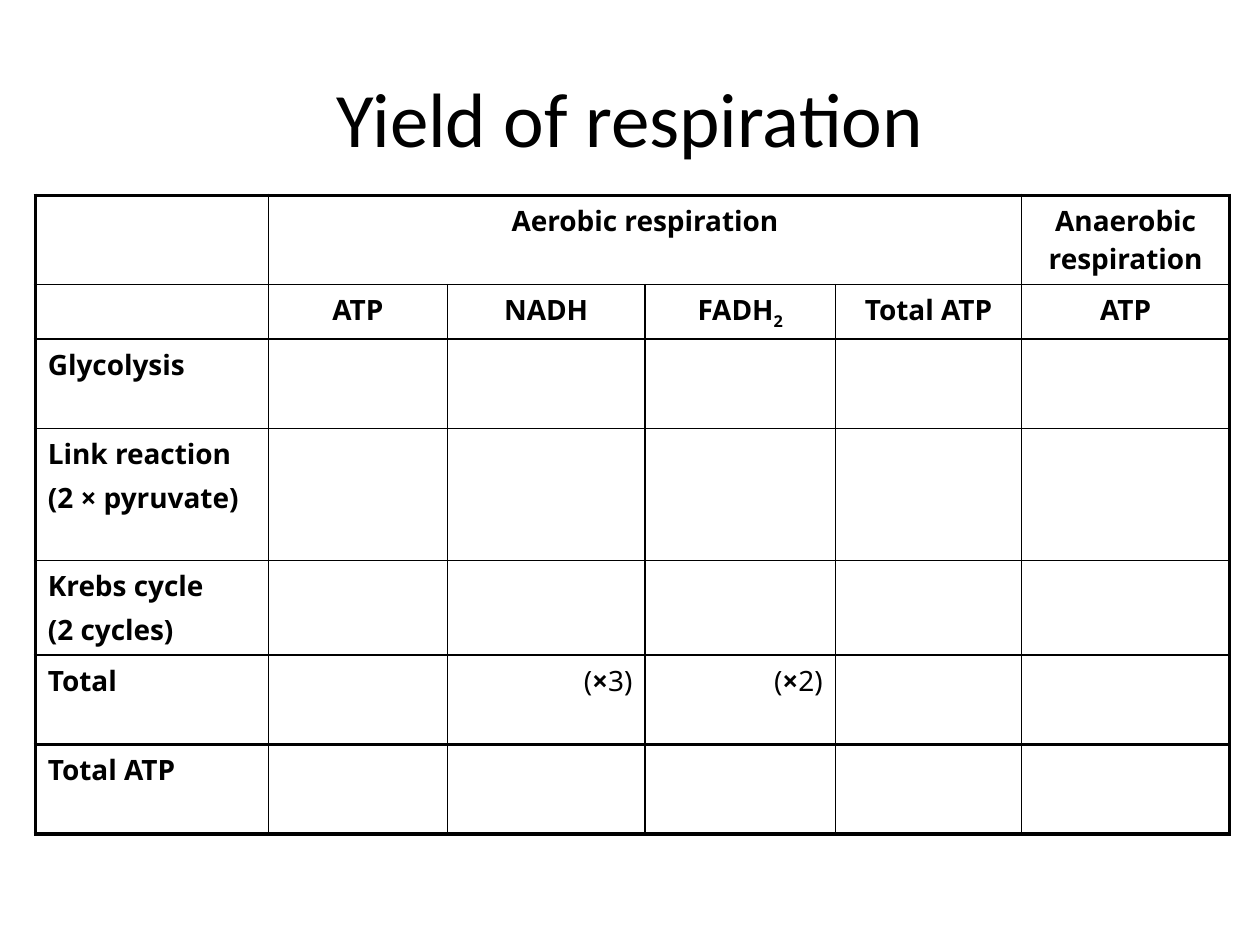
from lxml.etree import SubElement as Sub
from pptx import Presentation
from pptx.dml.color import RGBColor
from pptx.enum.text import MSO_ANCHOR as Anchor, PP_ALIGN as Align
from pptx.oxml.ns import qn
from pptx.util import Inches, Pt

BLACK = RGBColor(0, 0, 0)
THIN, THICK = Pt(1), Pt(2.25)
COLS = [1.85, 1.42, 1.57, 1.51, 1.48, 1.65]
ROWS = [0.71, 0.43, 0.71, 1.05, 0.75, 0.71, 0.71]
HEADS = ["ATP", "NADH", "FADH", "Total ATP", "ATP"]
STEPS = ["Glycolysis", "Link reaction\n(2 × pyruvate)", "Krebs cycle\n(2 cycles)",
         "Total", "Total ATP"]


def write(frame, text, size=16, font="Noto Sans", bold=True, align=Align.LEFT,
          before=3.2, base=0, more=False):
    for i, line in enumerate(text.split("\n")):
        new = i > 0 and not more
        para = frame.add_paragraph() if new else frame.paragraphs[-1]
        para.alignment = align
        para.space_before = Pt(before)
        run = para.add_run()
        run.text = line
        run.font.size = Pt(size)
        run.font.name = font
        run.font.bold = bold
        run.font.color.rgb = BLACK
        if base:
            run._r.get_or_add_rPr().set("baseline", str(base * 1000))


def edge(cell, side, width):
    line = Sub(cell._tc.get_or_add_tcPr(), qn("a:ln" + side), w=str(width))
    fill = Sub(line, qn("a:solidFill"))
    Sub(fill, qn("a:srgbClr"), val=str(BLACK))


prs = Presentation()
prs.slide_width = Inches(10)
prs.slide_height = Inches(7.5)
slide = prs.slides.add_slide(prs.slide_layouts[6])

grid = slide.shapes.add_table(len(ROWS), len(COLS), Inches(0.28), Inches(1.55),
                              Inches(sum(COLS)), Inches(sum(ROWS))).table
grid.first_row = False
grid.horz_banding = False
for col, width in zip(grid.columns, COLS):
    col.width = Inches(width)
for row, height in zip(grid.rows, ROWS):
    row.height = Inches(height)

end_row, end_col = len(ROWS) - 1, len(COLS) - 1
for r in range(len(ROWS)):
    for c in range(len(COLS)):
        cell = grid.cell(r, c)
        edge(cell, "L", THICK if c == 0 else THIN)
        edge(cell, "R", THICK if c == end_col else THIN)
        edge(cell, "T", THICK if r in (0, end_row) else THIN)
        edge(cell, "B", THICK if r >= end_row - 1 else THIN)
        cell.fill.background()

grid.cell(0, 1).merge(grid.cell(0, 4))
write(grid.cell(0, 1).text_frame, "Aerobic respiration", align=Align.CENTER)
write(grid.cell(0, 5).text_frame, "Anaerobic respiration", align=Align.CENTER)
for c, head in enumerate(HEADS, 1):
    write(grid.cell(1, c).text_frame, head, align=Align.CENTER)
write(grid.cell(1, 3).text_frame, "2", align=Align.CENTER, base=-25, more=True)
for r, step in enumerate(STEPS, 2):
    write(grid.cell(r, 0).text_frame, step)
for c, rate in [(2, "3"), (3, "2")]:
    for part in ["(", "×", rate + ")"]:
        write(grid.cell(5, c).text_frame, part, bold=part == "×",
              align=Align.RIGHT, more=True)

title = slide.shapes.add_textbox(Inches(0.5), Inches(0.3), Inches(9), Inches(1.25))
title.text_frame.word_wrap = True
title.text_frame.vertical_anchor = Anchor.MIDDLE
write(title.text_frame, "Yield of respiration", size=44, font="Calibri",
      bold=False, align=Align.CENTER, before=0)

prs.save("out.pptx")
